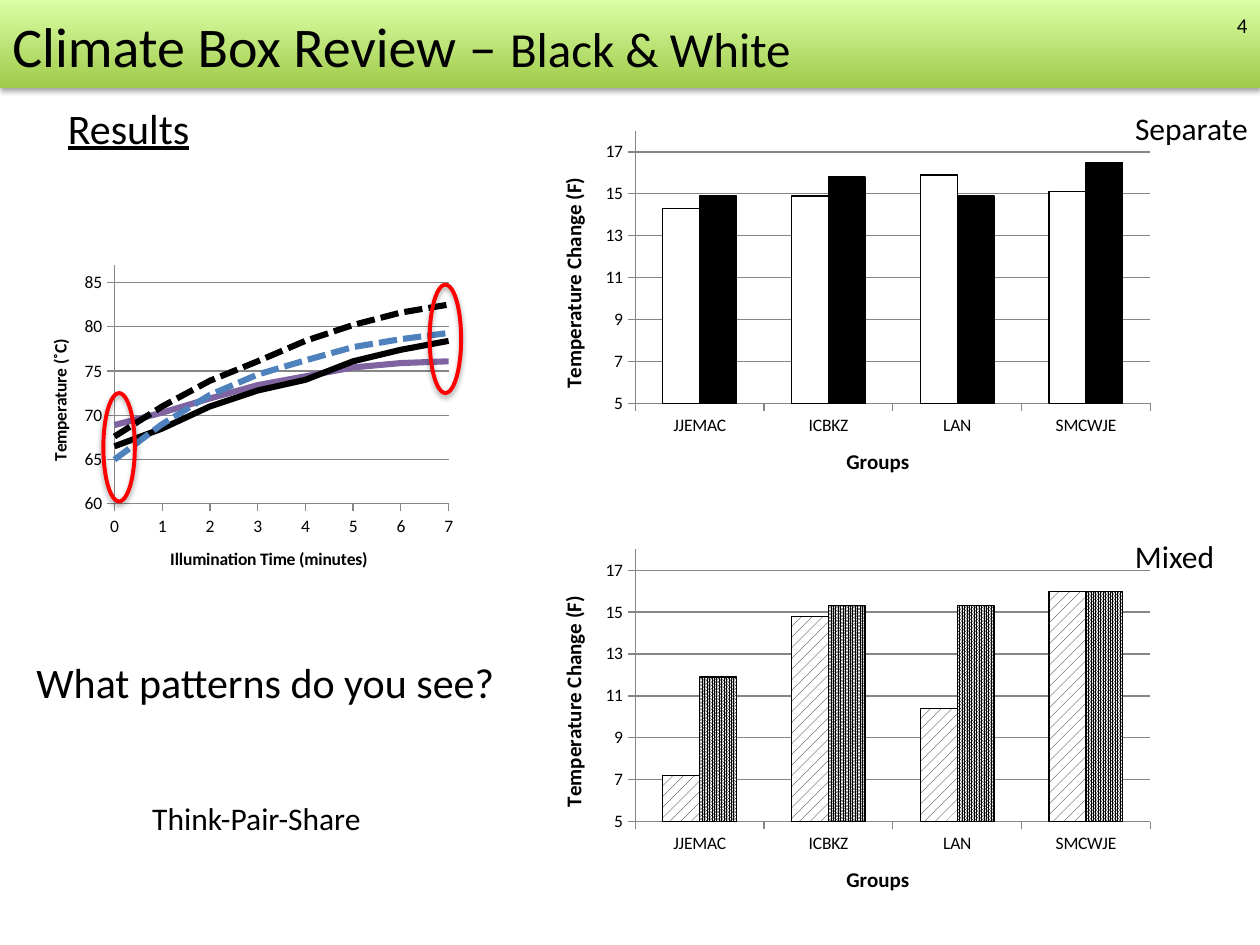
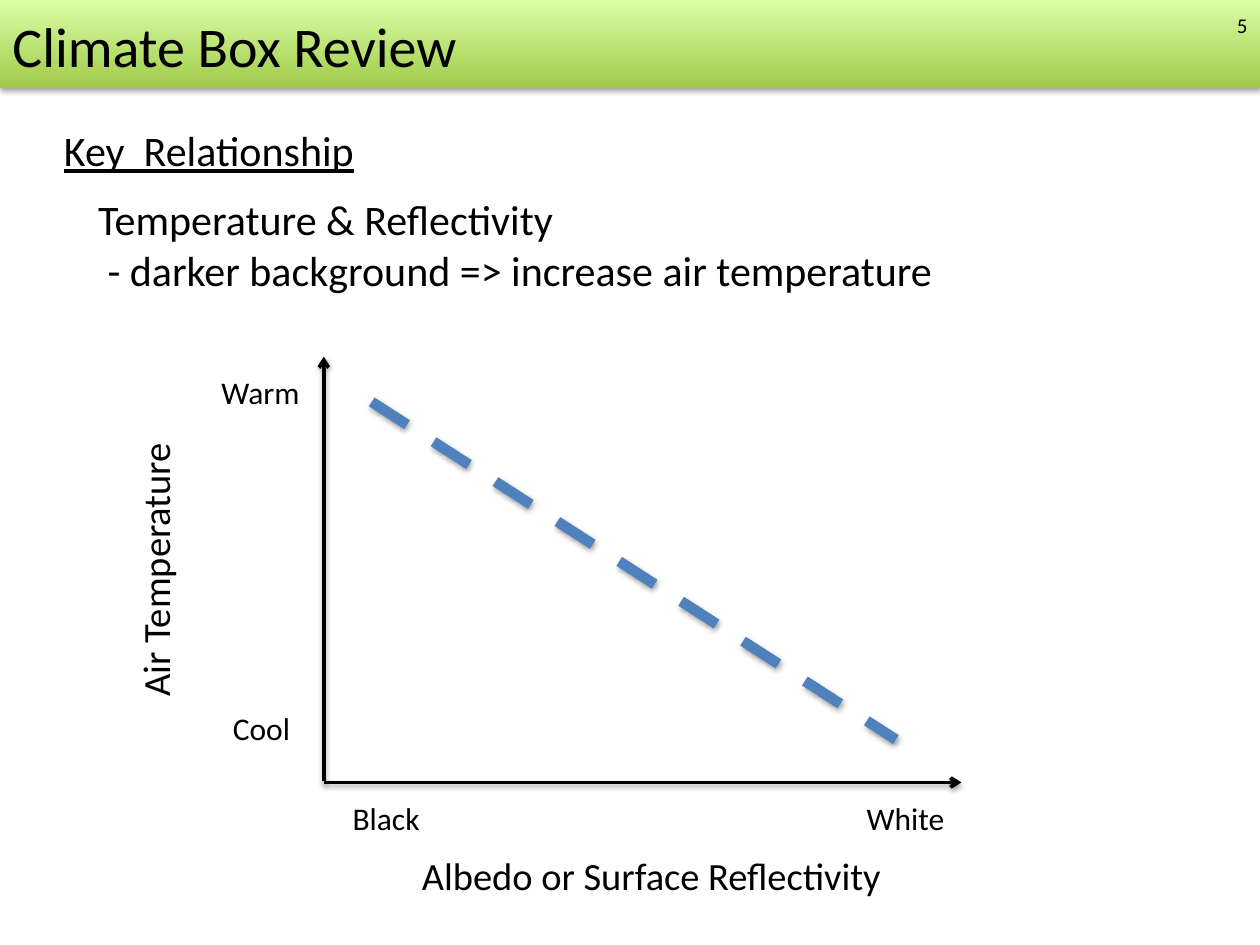
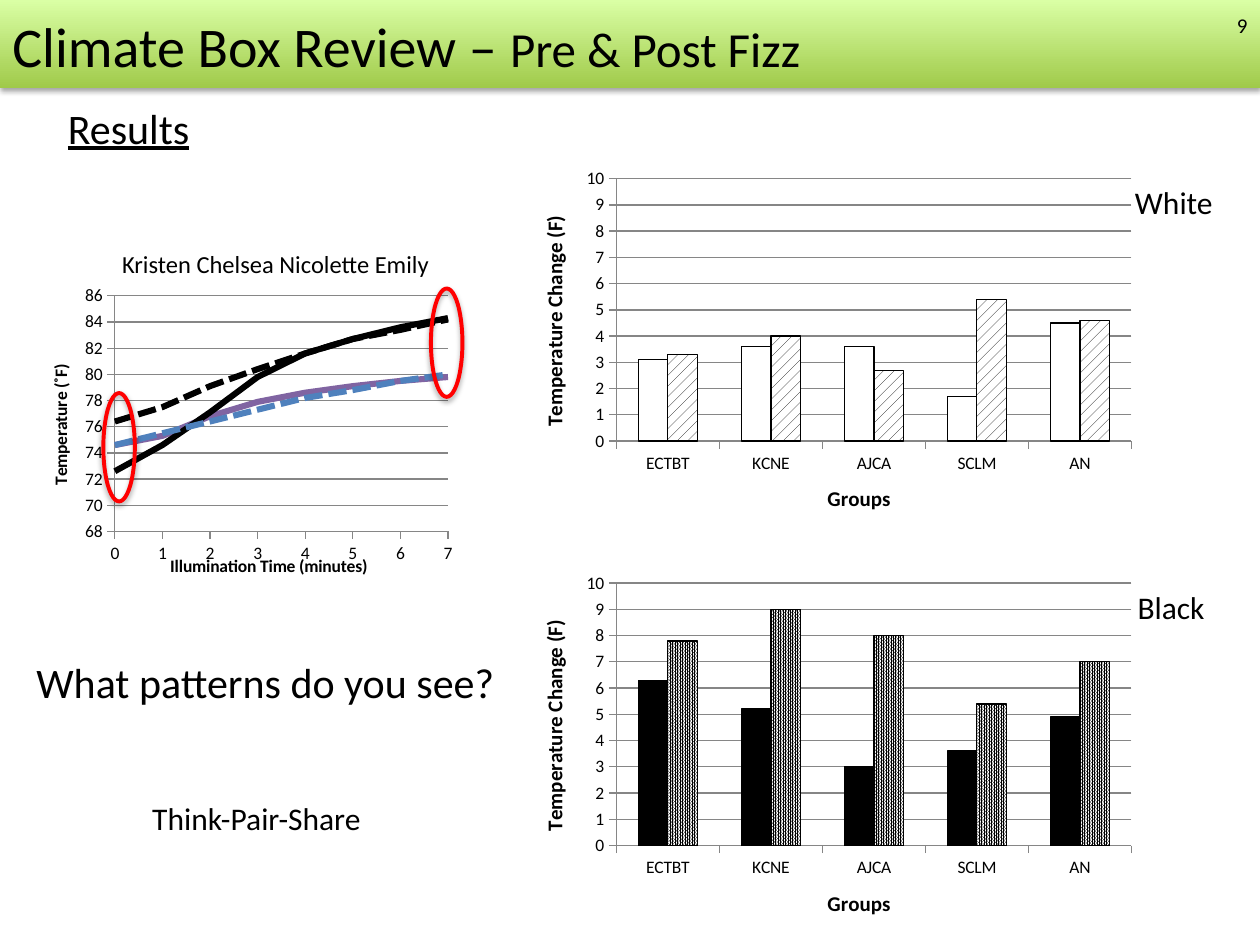
"""Builds three climate box review slides with charts and a relationship sketch."""
from lxml import etree
from pptx import Presentation
from pptx.chart.data import CategoryChartData, XyChartData
from pptx.dml.color import RGBColor
from pptx.enum.chart import XL_CHART_TYPE, XL_TICK_MARK
from pptx.enum.dml import MSO_LINE, MSO_PATTERN
from pptx.enum.shapes import MSO_CONNECTOR, MSO_SHAPE
from pptx.enum.text import MSO_ANCHOR, MSO_AUTO_SIZE, PP_ALIGN
from pptx.oxml import parse_xml
from pptx.oxml.ns import qn
from pptx.util import Pt

PX = 9144
FONT = "Calibri"
SCATTER = XL_CHART_TYPE.XY_SCATTER_LINES_NO_MARKERS
COLUMNS = XL_CHART_TYPE.COLUMN_CLUSTERED
OUTSIDE, NO_TICK = XL_TICK_MARK.OUTSIDE, XL_TICK_MARK.NONE
SHORT_DASH, DASH = MSO_LINE.SQUARE_DOT, MSO_LINE.DASH
LIGHT, DENSE = MSO_PATTERN.PERCENT_20, MSO_PATTERN.PERCENT_90
STRAIGHT = MSO_CONNECTOR.STRAIGHT
RECTANGLE, OVAL = MSO_SHAPE.RECTANGLE, MSO_SHAPE.OVAL
MIDDLE, RIGHT = MSO_ANCHOR.MIDDLE, PP_ALIGN.RIGHT
FIT_SHAPE, NO_FIT = MSO_AUTO_SIZE.SHAPE_TO_FIT_TEXT, MSO_AUTO_SIZE.NONE

HEX = {
    "black": "000000", "white": "FFFFFF", "blue": "4F81BD", "purple": "8064A2",
    "red": "FF0000", "grid": "868686", "band_bottom": "A0CA4A", "band_top": "DAFFA5",
}
COLOR = {name: RGBColor.from_string(value) for name, value in HEX.items()}
CHART_NS = "http://schemas.openxmlformats.org/drawingml/2006/chart"
DRAWING_NS = "http://schemas.openxmlformats.org/drawingml/2006/main"


def add_text(page, place, paragraphs, wrap=False, underline=None, **paragraph_format):
    """Add a text box whose paragraphs are lists of (text, size) spans."""
    box = page.shapes.add_textbox(*[length * PX for length in place])
    frame = box.text_frame
    frame.word_wrap = wrap
    frame.auto_size = NO_FIT if wrap else FIT_SHAPE
    for index, spans in enumerate(paragraphs):
        para = frame.add_paragraph() if index else frame.paragraphs[0]
        for name, value in paragraph_format.items():
            setattr(para, name, value)
        for text, size in spans:
            span = para.add_run()
            span.text = text
            formats = {"name": FONT, "size": Pt(size), "underline": underline}
            for name, value in formats.items():
                setattr(span.font, name, value)
            span.font.color.rgb = COLOR["black"]
    return box


def add_graph(page, kind, place, data, titles, title_size, scale):
    """Add a chart with the shared axis, grid and text style."""
    place = [length * PX for length in place]
    chart = page.shapes.add_chart(kind, *place, data).chart
    chart.has_legend = chart.has_title = False
    chart.font.name, chart.font.size = FONT, Pt(10)
    chart.font.color.rgb = COLOR["black"]
    for axis, title in zip((chart.category_axis, chart.value_axis), titles):
        is_value = axis is not chart.category_axis and title == titles[1]
        formats = {
            "major_tick_mark": OUTSIDE, "minor_tick_mark": NO_TICK,
            "has_minor_gridlines": False, "has_major_gridlines": is_value,
        }
        if is_value:
            formats.update(zip(("minimum_scale", "maximum_scale", "major_unit"), scale))
        elif kind == SCATTER:
            formats.update(minimum_scale=0, maximum_scale=7, major_unit=1)
        for name, value in formats.items():
            setattr(axis, name, value)
        lines = [axis.format.line]
        if is_value:
            axis.tick_labels.number_format = "0"
            axis.tick_labels.number_format_is_linked = False
            lines.append(axis.major_gridlines.format.line)
        for line in lines:
            line.color.rgb, line.width = COLOR["grid"], Pt(0.75)
        frame = axis.axis_title.text_frame
        frame.text = title
        font = frame.paragraphs[0].runs[0].font
        for name, value in {"name": FONT, "size": Pt(title_size), "bold": True}.items():
            setattr(font, name, value)
        font.color.rgb = COLOR["black"]
        if is_value:
            body = frame._txBody.find(qn("a:bodyPr"))
            body.set("rot", "-5400000")
            body.set("vert", "horz")
    return chart


deck = Presentation()
deck.slide_width, deck.slide_height = 1000 * PX, 750 * PX
shadowed = []

pages = []
for number, title_box, title in [
    ("4", (0, 4, 647, 64), [("Climate Box Review – ", 32), ("Black & White", 28)]),
    ("5", (0, 4, 379, 118), [("Climate Box Review", 32)]),
    ("9", (0, 4, 656, 64), [("Climate Box Review – ", 32), ("Pre & Post Fizz", 28)]),
]:
    page = deck.slides.add_slide(deck.slide_layouts[6])
    band = page.shapes.add_shape(RECTANGLE, 0, 0, 1000 * PX, 70 * PX)
    band.fill.gradient()
    band.fill.gradient_angle = 90
    for stop, name in zip(band.fill.gradient_stops, ("band_bottom", "band_top")):
        stop.color.rgb = COLOR[name]
    band.line.fill.background()
    shadowed.append((band, 1.8, 35))
    add_text(page, title_box, [title])
    number_box = add_text(page, (767, 0, 233, 40), [[(number, 12)]], True, alignment=RIGHT)
    number_box.text_frame.vertical_anchor = MIDDLE
    pages.append(page)
black_white, relationship, fizz = pages

line_styles = [
    ("blue", SHORT_DASH), ("black", SHORT_DASH), ("black", None), ("purple", None),
]
for page, place, plot_corner, unit, scale, temperatures, rings in [
    (black_white, (35, 122, 349, 339), (0.16, 0.26), "˚C", (60, 87, 5), [
        [65, 69, 72.3, 74.6, 76.2, 77.7, 78.6, 79.3],
        [67.6, 71, 73.9, 76.1, 78.4, 80.2, 81.6, 82.5],
        [66.5, 68.5, 71, 72.8, 74, 76.1, 77.4, 78.4],
        [68.9, 70.3, 71.9, 73.4, 74.4, 75.4, 75.9, 76.1],
    ], [(341, 226), (82, 312)]),
    (fizz, (32, 128, 348, 334), (0.17, 0.32), "˚F", (68, 86, 2), [
        [74.6, 75.5, 76.4, 77.3, 78.2, 78.8, 79.5, 80],
        [76.4, 77.5, 79.1, 80.4, 81.6, 82.7, 83.4, 84.2],
        [72.6, 74.6, 77.1, 79.8, 81.6, 82.7, 83.6, 84.3],
        [74.6, 75.3, 76.8, 77.9, 78.6, 79.1, 79.5, 79.8],
    ], [(342, 229), (82, 312)]),
]:
    data = XyChartData()
    for index, values in enumerate(temperatures, 1):
        series = data.add_series(f"Series {index}")
        for minute, value in enumerate(values):
            series.add_data_point(minute, value)
    titles = ("Illumination Time (minutes)", f"Temperature ({unit})")
    chart = add_graph(page, SCATTER, place, data, titles, 10, scale)
    chart.plots[0].vary_by_categories = False
    for series, (name, dash) in zip(chart.plots[0].series, line_styles):
        series.smooth = False
        line = series.format.line
        line.color.rgb, line.width = COLOR[name], Pt(3.5)
        if dash:
            line.dash_style = dash

    plot_area = chart._chartSpace.chart.plotArea
    for old_layout in plot_area.findall(qn("c:layout")):
        plot_area.remove(old_layout)
    layout = etree.Element(qn("c:layout"), nsmap={"c": CHART_NS})
    manual = etree.SubElement(layout, qn("c:manualLayout"))
    for tag, value in [
        ("layoutTarget", "inner"), ("xMode", "edge"), ("yMode", "edge"),
        ("x", plot_corner[0]), ("y", plot_corner[1]), ("w", 0.76), ("h", 0.56),
    ]:
        etree.SubElement(manual, qn(f"c:{tag}")).set("val", str(value))
    plot_area.insert(0, layout)

    for left, top in rings:
        ring = page.shapes.add_shape(OVAL, left * PX, top * PX, 25 * PX, 86 * PX)
        ring.fill.background()
        ring.line.color.rgb, ring.line.width = COLOR["red"], Pt(2.25)
        shadowed.append((ring, 1.8, 35))
    add_text(page, (44, 84, 118, 44), [[("Results", 24)]], underline=True, line_spacing=0.8)
    add_text(page, (19, 516, 389, 50), [[("What patterns do you see?", 24)]])
    add_text(page, (111, 629, 190, 40), [[("Think-Pair-Share", 18)]])

add_text(fizz, (87, 193, 342, 34), [[("Kristen Chelsea Nicolette Emily", 14)]], True)

separate_groups = ["JJEMAC", "ICBKZ", "LAN", "SMCWJE"]
fizz_groups = ["ECTBT", "KCNE", "AJCA", "SCLM", "AN"]
for page, corner, groups, scale, bars in [
    (black_white, (423, 98), separate_groups, (5, 18, 2),
     [("white", [14.3, 14.9, 15.9, 15.1]), ("black", [14.9, 15.8, 14.9, 16.5])]),
    (black_white, (423, 430), separate_groups, (5, 18, 2),
     [(LIGHT, [7.2, 14.8, 10.4, 16]), (DENSE, [11.9, 15.3, 15.3, 16])]),
    (fizz, (408, 128), fizz_groups, (0, 10, 1),
     [("white", [3.1, 3.6, 3.6, 1.7, 4.5]), (LIGHT, [3.3, 4, 2.7, 5.4, 4.6])]),
    (fizz, (408, 449), fizz_groups, (0, 10, 1),
     [("black", [6.3, 5.2, 3, 3.6, 4.9]), (DENSE, [7.8, 9, 8, 5.4, 7])]),
]:
    data = CategoryChartData()
    data.categories = groups
    for index, (paint, values) in enumerate(bars, 1):
        data.add_series(f"Series {index}", values)
    titles = ("Groups", "Temperature Change (F)")
    chart = add_graph(page, COLUMNS, (*corner, 500, 300), data, titles, 12, scale)
    plot = chart.plots[0]
    plot.gap_width, plot.vary_by_categories = 150, False
    for series, (paint, values) in zip(plot.series, bars):
        fill = series.format.fill
        if paint in COLOR:
            fill.solid()
            fill.fore_color.rgb = COLOR[paint]
        else:
            fill.patterned()
            fill.pattern = paint
            fill.fore_color.rgb, fill.back_color.rgb = COLOR["black"], COLOR["white"]
        series.format.line.color.rgb = COLOR["black"]
        series.format.line.width = Pt(0.75)

for page, place, label, size in [
    (black_white, (891, 82, 112, 40), "Separate", 18),
    (black_white, (891, 421, 84, 40), "Mixed", 18),
    (fizz, (891, 140, 83, 40), "White", 18),
    (fizz, (893, 462, 74, 40), "Black", 18),
    (relationship, (270, 629, 74, 40), "Black", 18),
    (relationship, (678, 629, 83, 40), "White", 18),
    (relationship, (175, 558, 66, 40), "Cool", 18),
    (relationship, (166, 291, 84, 40), "Warm", 18),
    (relationship, (325, 671, 390, 47), "Albedo or Surface Reflectivity", 22),
]:
    add_text(page, place, [[(label, size)]])

add_text(relationship, (9, 425, 228, 47), [[("Air Temperature", 22)]]).rotation = 270
add_text(relationship, (41, 102, 254, 44), [[("Key  Relationship", 24)]],
         underline=True, line_spacing=0.8)
add_text(relationship, (68, 149, 693, 91), [
    [("Temperature & Reflectivity", 24)],
    [(" - darker background => increase air temperature", 24)],
])

for ends, name, width, is_axis in [
    ((257, 621, 763, 621), "black", 2, True),
    ((257, 620, 257, 283), "black", 2, True),
    ((295, 319, 711, 587), "blue", 6, False),
]:
    stroke = relationship.shapes.add_connector(STRAIGHT, *[end * PX for end in ends])
    stroke.line.color.rgb, stroke.line.width = COLOR[name], Pt(width)
    if is_axis:
        etree.SubElement(stroke.line._get_or_add_ln(), qn("a:tailEnd")).set("type", "arrow")
    else:
        stroke.line.dash_style = DASH
    shadowed.append((stroke, 1.6, 38))

for shape, distance, opacity in shadowed:
    shape._element.spPr.append(parse_xml(
        f'<a:effectLst xmlns:a="{DRAWING_NS}">'
        f'<a:outerShdw blurRad="{Pt(3.1)}" dist="{Pt(distance)}" dir="5400000" rotWithShape="0">'
        f'<a:srgbClr val="{HEX["black"]}"><a:alpha val="{opacity * 1000}"/></a:srgbClr>'
        "</a:outerShdw></a:effectLst>"))

deck.save("out.pptx")
